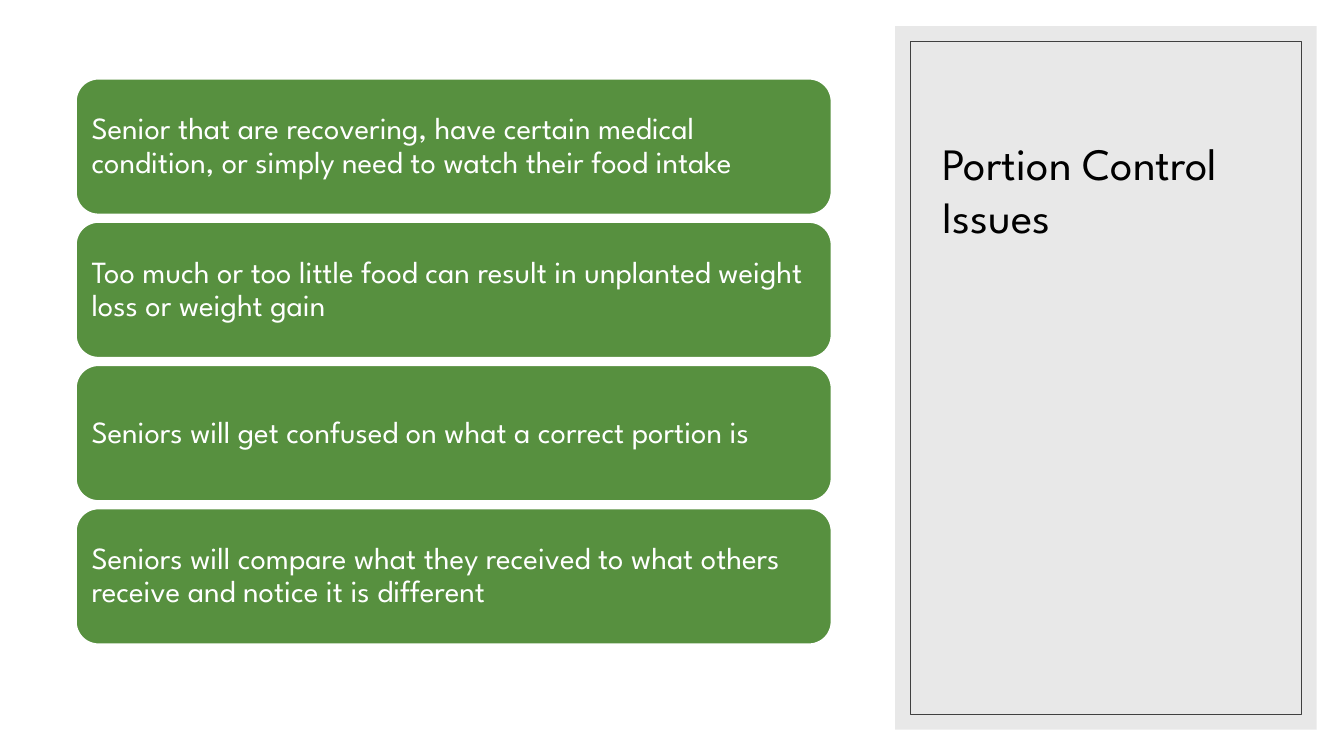
from lxml import etree
from pptx import Presentation
from pptx.dml.color import RGBColor
from pptx.enum.shapes import MSO_SHAPE
from pptx.enum.text import MSO_ANCHOR, MSO_AUTO_SIZE, PP_ALIGN
from pptx.oxml.ns import qn
from pptx.util import Cm, Pt

# Content
HEADING = "Portion Control Issues"
ISSUES = [
    "Senior that are recovering, have certain medical condition, or simply need to watch their food intake",
    "Too much or too little food can result in unplanted weight loss or weight gain",
    "Seniors will get confused on what a correct portion is",
    "Seniors will compare what they received to what others receive and notice it is different",
]

# Style
FONT = "League Spartan"
GREEN = RGBColor(0x57, 0x90, 0x3F)
WHITE = RGBColor(0xFF, 0xFF, 0xFF)
BLACK = RGBColor(0x00, 0x00, 0x00)
PANEL_GREY = RGBColor(0xD9, 0xD9, 0xD9)
FRAME_GREY = RGBColor(0x40, 0x40, 0x40)
PANEL_OPACITY = 60
RECT, ROUNDED = MSO_SHAPE.RECTANGLE, MSO_SHAPE.ROUNDED_RECTANGLE
LEFT = PP_ALIGN.LEFT
MIDDLE, BOTTOM = MSO_ANCHOR.MIDDLE, MSO_ANCHOR.BOTTOM
NO_AUTOFIT = MSO_AUTO_SIZE.NONE

# Layout, in centimetres
PANEL_LEFT, PANEL_TOP, PANEL_WIDTH, PANEL_HEIGHT = 22.56, 0.66, 10.62, 17.73
FRAME_INSET = 0.38
CARD_LEFT, CARD_TOP, CARD_WIDTH, CARD_HEIGHT = 1.91, 1.98, 19.05, 3.43
CARD_PITCH = 3.61
CARD_PADDING = 0.23


def add_box(slide, kind, left, top, width, height, fill, line, line_width):
    box = slide.shapes.add_shape(kind, Cm(left), Cm(top), Cm(width), Cm(height))
    box.shadow.inherit = False
    if fill is None:
        box.fill.background()
    else:
        box.fill.solid()
        box.fill.fore_color.rgb = fill
    if line is None:
        box.line.fill.background()
    else:
        box.line.color.rgb = line
        box.line.width = Pt(line_width)
    return box


def write(frame, text, size, color, anchor):
    frame.word_wrap = True
    frame.auto_size = NO_AUTOFIT
    frame.vertical_anchor = anchor
    paragraph = frame.paragraphs[0]
    paragraph.alignment = LEFT
    run = paragraph.add_run()
    run.text = text
    run.font.name = FONT
    run.font.size = Pt(size)
    run.font.color.rgb = color
    return paragraph


def main():
    prs = Presentation()
    prs.slide_width, prs.slide_height = Cm(33.87), Cm(19.05)
    slide = prs.slides.add_slide(prs.slide_layouts[5])

    # Heading
    heading = slide.shapes.title
    heading.left, heading.top = Cm(23.5), Cm(1.68)
    heading.width, heading.height = Cm(8.79), Cm(4.57)
    write(heading.text_frame, HEADING, 32, BLACK, BOTTOM)

    # Side panel and its frame, placed behind the heading
    panel = add_box(slide, RECT, PANEL_LEFT, PANEL_TOP, PANEL_WIDTH, PANEL_HEIGHT,
                    PANEL_GREY, None, 0)
    panel_color = panel.element.spPr.find(qn("a:solidFill")).find(qn("a:srgbClr"))
    etree.SubElement(panel_color, qn("a:alpha")).set("val", str(PANEL_OPACITY * 1000))
    frame = add_box(slide, RECT, PANEL_LEFT + FRAME_INSET, PANEL_TOP + FRAME_INSET,
                    PANEL_WIDTH - 2 * FRAME_INSET, PANEL_HEIGHT - 2 * FRAME_INSET,
                    None, FRAME_GREY, 0.5)
    for backdrop in (panel, frame):
        heading.element.addprevious(backdrop.element)

    # Issue cards
    for row, issue in enumerate(ISSUES):
        card = add_box(slide, ROUNDED, CARD_LEFT, CARD_TOP + row * CARD_PITCH,
                       CARD_WIDTH, CARD_HEIGHT, GREEN, WHITE, 1.5)
        body = card.text_frame
        body.margin_left = body.margin_right = Cm(CARD_PADDING)
        body.margin_top = body.margin_bottom = Cm(CARD_PADDING)
        write(body, issue, 22, WHITE, MIDDLE).line_spacing = 0.9

    prs.save("out.pptx")


if __name__ == "__main__":
    main()
